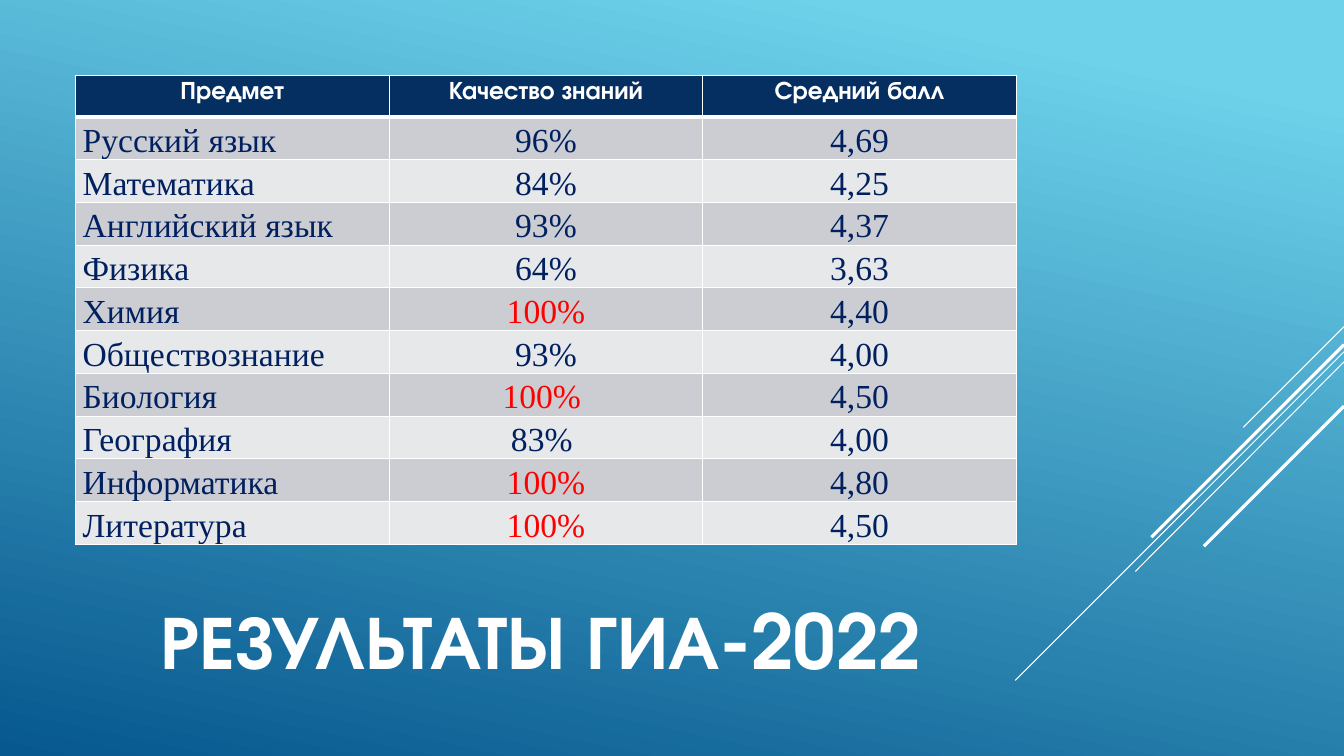
from lxml import etree
from pptx import Presentation
from pptx import util as u
from pptx.dml.color import RGBColor
from pptx.enum import shapes, text
from pptx.oxml import ns

WHITE, NAVY, INK, RED = "FFFFFF", "052F61", "002060", "FF0000"
BANDS = ("CCCDD2", "E7E8EA")
HEADINGS = ("Предмет", "Качество знаний", "Средний балл")
RESULTS = (
    ("Русский язык", "96%", "4,69"),
    ("Математика", "84%", "4,25"),
    ("Английский язык", "93%", "4,37"),
    ("Физика", "64%", "3,63"),
    ("Химия", "100%", "4,40"),
    ("Обществознание", "93%", "4,00"),
    ("Биология", "100% ", "4,50"),
    ("География", "83% ", "4,00"),
    ("Информатика", "100%", "4,80"),
    ("Литература", "100%", "4,50"),
)
# Right-edge height, left end, weight of each diagonal
RAYS = (
    (3.24, 12.33, 4.24, 0.75),
    (3.49, 10.07, 6.75, 0.75),
    (3.59, 11.26, 5.67, 0.75),
    (3.42, 11.42, 5.33, 2.25),
    (4.03, 11.94, 5.42, 2.25),
)


def colour(value):
    return RGBColor.from_string(value)


class ResultsPage:
    heading_font = "TeX Gyre Adventor"
    body_font = "Times New Roman"

    def __init__(self, deck):
        self.page = deck.slides.add_slide(deck.slide_layouts[5])

    def background(self, start, end):
        fill = self.page.background.fill
        fill.gradient()
        fill.gradient_angle = 258
        for stop, position, value in zip(fill.gradient_stops, (0.1, 1), (start, end)):
            stop.position = position
            stop.color.rgb = colour(value)

    def line(self, x1, y1, x2, y2, weight):
        line = self.page.shapes.add_connector(
            shapes.MSO_CONNECTOR.STRAIGHT, *map(u.Inches, (x1, y1, x2, y2)))
        line.line.color.rgb = colour(WHITE)
        line.line.width = u.Pt(weight)
        properties = line._element.find(ns.qn("p:spPr"))
        etree.SubElement(properties, ns.qn("a:effectLst"))

    def span(self, para, words, size, font, value, bold):
        span = para.add_run()
        span.text = words
        span.font.size = u.Pt(size)
        span.font.name = font
        span.font.bold = bold
        span.font.color.rgb = colour(value)

    def title(self, words, left, top, width, height):
        box = self.page.shapes.title
        box.left, box.top, box.width, box.height = map(
            u.Inches, (left, top, width, height))
        frame = box.text_frame
        frame.word_wrap = True
        frame.auto_size = text.MSO_AUTO_SIZE.NONE
        frame.vertical_anchor = text.MSO_ANCHOR.MIDDLE
        para = frame.paragraphs[0]
        para.alignment = text.PP_ALIGN.LEFT
        self.span(para, words, 54, self.heading_font, WHITE, True)

    def borders(self, cell, top, bottom):
        """Draw white cell edges; they must precede the cell's fill."""
        properties = cell._tc.get_or_add_tcPr()
        for side, weight in (("L", 1), ("R", 1), ("T", top), ("B", bottom)):
            edge = etree.SubElement(properties, ns.qn("a:ln" + side), w=str(u.Pt(weight)))
            fill = etree.SubElement(edge, ns.qn("a:solidFill"))
            etree.SubElement(fill, ns.qn("a:srgbClr"), val=WHITE)

    def header_cell(self, cell, words):
        self.borders(cell, 1, 3)
        cell.fill.solid()
        cell.fill.fore_color.rgb = colour(NAVY)
        para = cell.text_frame.paragraphs[0]
        para.alignment = text.PP_ALIGN.CENTER
        self.span(para, words, 18, self.heading_font, WHITE, True)

    def body_cell(self, cell, words, row, column):
        self.borders(cell, 3 if row == 0 else 1, 1)
        cell.fill.solid()
        cell.fill.fore_color.rgb = colour(BANDS[row % 2])
        cell.margin_left = cell.margin_right = u.Inches(0.07)
        cell.margin_top = cell.margin_bottom = 0
        para = cell.text_frame.paragraphs[0]
        para.alignment = text.PP_ALIGN.CENTER if column else text.PP_ALIGN.JUSTIFY
        para.line_spacing = 1.15
        value = RED if words.strip() == "100%" else INK
        self.span(para, words, 24, self.body_font, value, False)

    def table(self, headings, rows, left, top, column_width, row_height):
        count = len(rows) + 1
        table = self.page.shapes.add_table(
            count, len(headings), u.Inches(left), u.Inches(top),
            u.Inches(column_width * len(headings)), u.Inches(row_height * count)).table
        for column in table.columns:
            column.width = u.Inches(column_width)
        for row in table.rows:
            row.height = u.Inches(row_height)
        for column, words in enumerate(headings):
            self.header_cell(table.cell(0, column), words)
        for row, values in enumerate(rows):
            for column, words in enumerate(values):
                self.body_cell(table.cell(row + 1, column), words, row, column)


def main():
    deck = Presentation()
    deck.slide_width, deck.slide_height = u.Inches(13.33), u.Inches(7.5)
    results = ResultsPage(deck)
    results.background("6ED2EB", "06588E")
    for start, x, y, weight in RAYS:
        results.line(13.33, start, x, y, weight)
    results.title("РЕЗУЛЬТАТЫ ГИА-2022", 1.49, 5.46, 8.76, 1.77)
    results.table(HEADINGS, RESULTS, 0.75, 0.75, 3.11, 0.41)
    deck.save("out.pptx")


if __name__ == "__main__":
    main()
